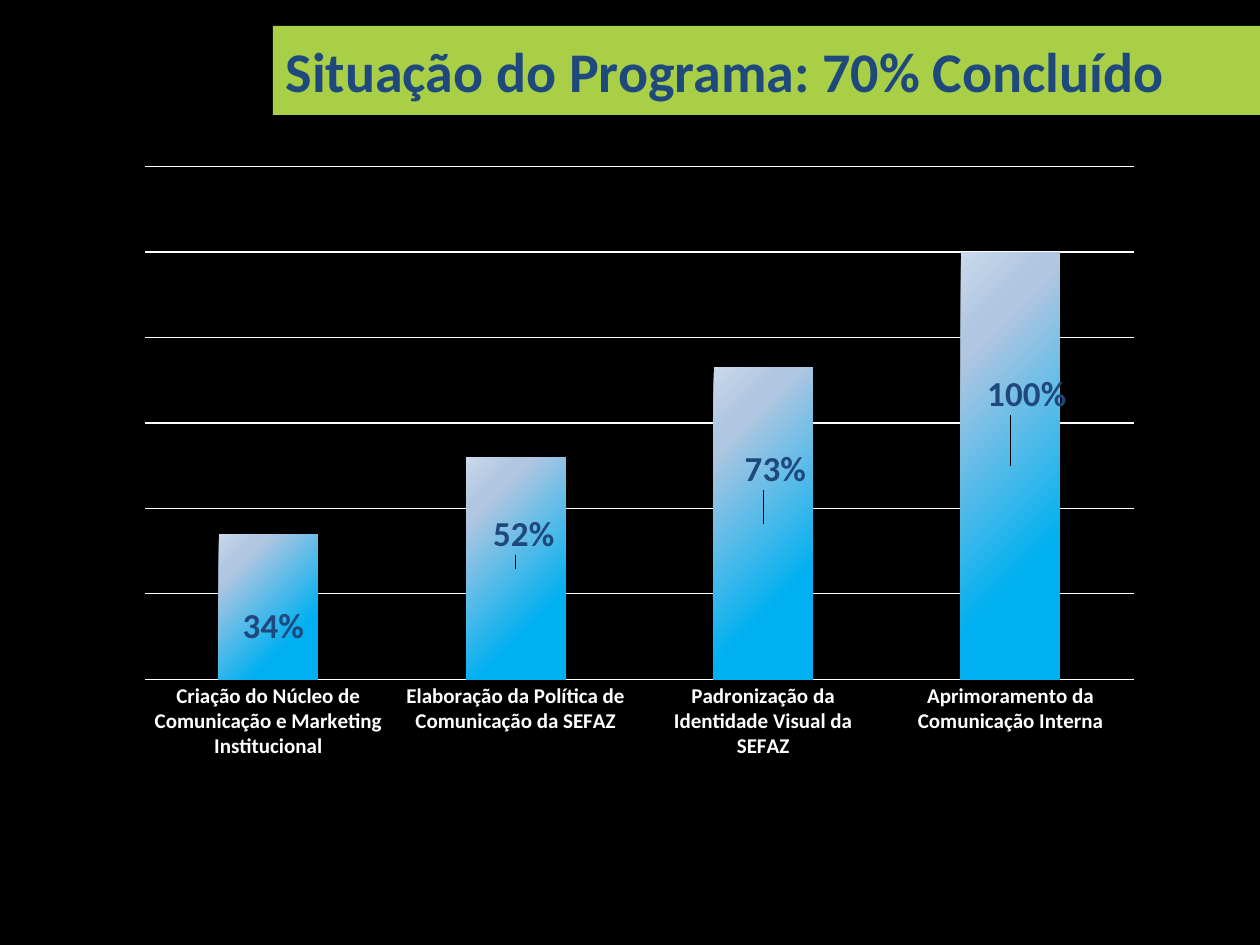
"""Build the programme status slide: a title band over a column chart."""
from lxml import etree
from pptx import Presentation
from pptx import util as u
from pptx.chart.data import CategoryChartData
from pptx.dml.color import RGBColor
from pptx.enum import chart as ch, text
from pptx.oxml import parse_xml
from pptx.oxml.ns import nsdecls, qn

PX = u.Inches(1) // 126
FONT = "Calibri"
BLACK = RGBColor(0x00, 0x00, 0x00)
WHITE = RGBColor(0xFF, 0xFF, 0xFF)
GREEN = RGBColor(0xA8, 0xCF, 0x45)
NAVY = RGBColor(0x1F, 0x49, 0x7D)
SKY = RGBColor(0x00, 0xB0, 0xF0)
MIST = RGBColor(0xB0, 0xC6, 0xE1)
PALE = RGBColor(0xCA, 0xD9, 0xEB)
BAR_STOPS = [(27, SKY), (79, MIST), (83, MIST), (100, PALE)]

CHART_BOX = (123, 155, 1032, 617)
PLOT_BOX = (22, 12, 990, 513)
PROJECTS = [
    ("Criação do Núcleo de Comunicação e Marketing Institucional", 0.34, (5, 20)),
    ("Elaboração da Política de Comunicação da SEFAZ", 0.52, (8, -34)),
    ("Padronização da Identidade Visual da SEFAZ", 0.73, (12, -55)),
    ("Aprimoramento da Comunicação Interna", 1, (16, -72)),
]


def set_font(font, size, color, bold=True):
    font.name, font.size, font.bold = FONT, u.Pt(size), bold
    font.color.rgb = color


def add_layout(parent, index, **values):
    layout = etree.Element(qn("c:layout"))
    manual = etree.SubElement(layout, qn("c:manualLayout"))
    for tag, value in values.items():
        etree.SubElement(manual, qn(f"c:{tag}")).set("val", str(value))
    for old in parent.findall(qn("c:layout")):
        parent.remove(old)
    parent.insert(index, layout)


def corner_gradient(stops):
    steps = "".join(
        f'<a:gs pos="{pos * 1000}"><a:srgbClr val="{color}"/></a:gs>'
        for pos, color in stops)
    return parse_xml(
        f'<a:gradFill {nsdecls("a")} rotWithShape="1"><a:gsLst>{steps}</a:gsLst>'
        '<a:path path="circle"><a:fillToRect l="100000" t="100000"/></a:path>'
        '</a:gradFill>')


def add_title(s, box, wording):
    sp = s.shapes.title
    sp.left, sp.top, sp.width, sp.height = (n * PX for n in box)
    sp.fill.solid()
    sp.fill.fore_color.rgb = GREEN
    tf = sp.text_frame
    tf.text = wording
    tf.word_wrap = True
    tf.auto_size = text.MSO_AUTO_SIZE.NONE
    tf.vertical_anchor = text.MSO_ANCHOR.MIDDLE
    p = tf.paragraphs[0]
    p.alignment = text.PP_ALIGN.LEFT
    set_font(p.font, 32, NAVY)


def format_axes(chart):
    cat, val = chart.category_axis, chart.value_axis
    cat.major_tick_mark = ch.XL_TICK_MARK.NONE
    cat.format.line.fill.background()
    set_font(cat.tick_labels.font, 12, WHITE)
    val.visible = False
    val.minimum_scale, val.maximum_scale, val.major_unit = 0, 1.2, 0.2
    val.has_major_gridlines = True
    grid = val.major_gridlines.format.line
    grid.color.rgb, grid.width = WHITE, u.Pt(0.75)


def format_labels(series, size):
    width, height = size
    for i, (_, _, (dx, dy)) in enumerate(PROJECTS):
        label = series.points[i].data_label
        set_font(label.font, 20, NAVY)
        label.position = ch.XL_LABEL_POSITION.CENTER
    labels = series.data_labels
    labels.show_value = True
    labels.number_format, labels.number_format_is_linked = "0%", False
    set_font(labels.font, 20, NAVY)
    for d_lbl, (_, _, (dx, dy)) in zip(
            series._element.iter(qn("c:dLbl")), PROJECTS):
        add_layout(d_lbl, 1, x=round(dx / width, 3), y=round(dy / height, 3))


def add_progress_chart(s):
    data = CategoryChartData(number_format="0%")
    data.categories = [name for name, _, _ in PROJECTS]
    data.add_series("Series 1", [done for _, done, _ in PROJECTS])
    chart = s.shapes.add_chart(
        ch.XL_CHART_TYPE.COLUMN_CLUSTERED,
        *(n * PX for n in CHART_BOX), data).chart
    chart.has_legend = chart.has_title = False
    set_font(chart.font, 10, WHITE, False)
    format_axes(chart)

    plot = chart.plots[0]
    plot.gap_width, plot.vary_by_categories = 150, False
    series = plot.series[0]
    series.format.line.fill.background()
    series._element.spPr.insert(0, corner_gradient(BAR_STOPS))

    width, height = CHART_BOX[2:]
    format_labels(series, (width, height))
    x, y, w, h = PLOT_BOX
    area = chart._chartSpace.chart.plotArea
    add_layout(area, 0, layoutTarget="inner", xMode="edge", yMode="edge",
               x=round(x / width, 3), y=round(y / height, 3),
               w=round(w / width, 3), h=round(h / height, 3))


def main():
    prs = Presentation()
    prs.slide_width, prs.slide_height = 1260 * PX, 945 * PX
    s = prs.slides.add_slide(prs.slide_layouts[5])
    s.background.fill.solid()
    s.background.fill.fore_color.rgb = BLACK
    add_title(s, (273, 26, 987, 89), "Situação do Programa: 70% Concluído")
    add_progress_chart(s)
    prs.save("out.pptx")


if __name__ == "__main__":
    main()
